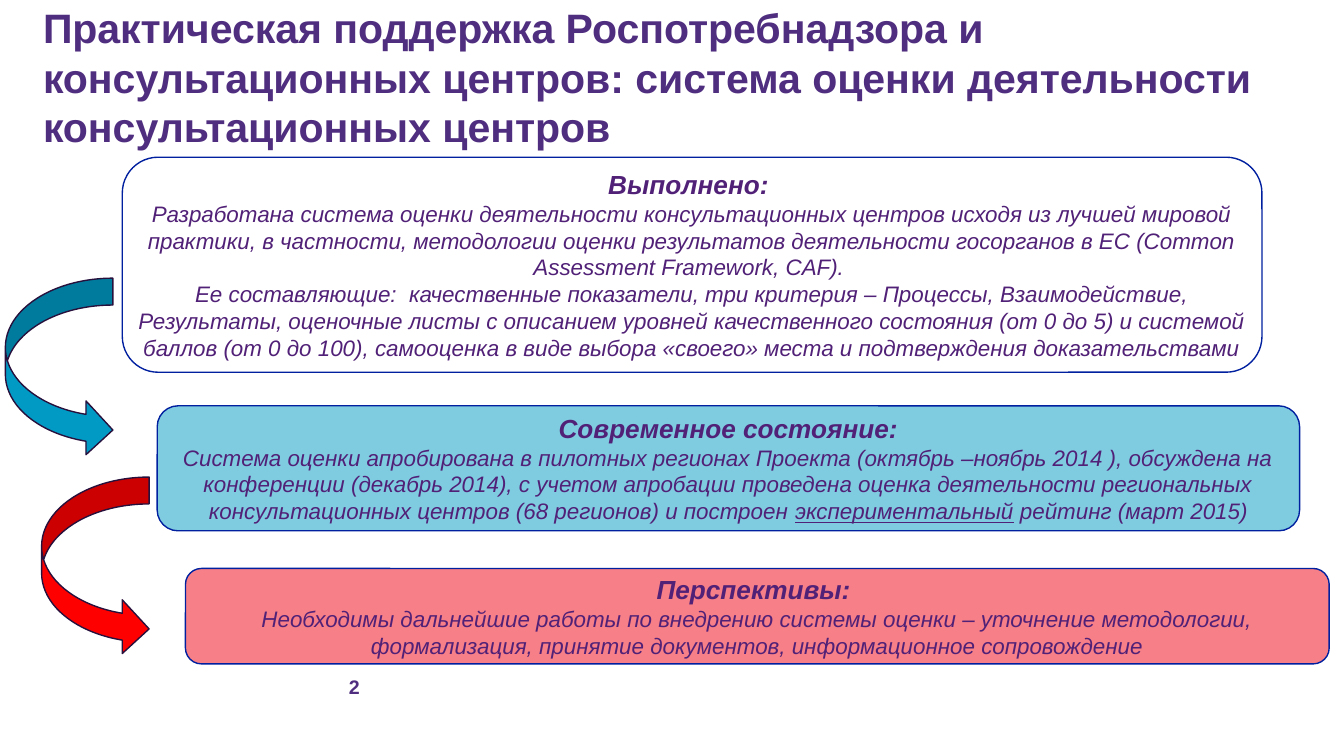
from lxml import etree
from pptx import Presentation
from pptx.dml.color import RGBColor
from pptx.enum.shapes import MSO_SHAPE
from pptx.enum.text import MSO_ANCHOR, MSO_AUTO_SIZE, PP_ALIGN
from pptx.oxml.ns import qn
from pptx.util import Inches, Pt

ROUNDED = MSO_SHAPE.ROUNDED_RECTANGLE
CURVED_ARROW = MSO_SHAPE.CURVED_RIGHT_ARROW
LEFT, CENTER = PP_ALIGN.LEFT, PP_ALIGN.CENTER
TOP, MIDDLE = MSO_ANCHOR.TOP, MSO_ANCHOR.MIDDLE

COLORS = {
    "title": "4F2D7F",
    "body": "512177",
    "box_line": "00209F",
    "arrow_line": "28103C",
    "blue": "009AC5",
    "rose": "F00010",
    "red": "FF0000",
}


def write(shape, paragraphs, color="body", align=CENTER, anchor=MIDDLE):
    """Fill a shape with paragraphs, each a list of (text, font attributes) runs."""
    frame = shape.text_frame
    frame.word_wrap = True
    frame.auto_size = MSO_AUTO_SIZE.NONE
    frame.vertical_anchor = anchor
    frame.margin_left = frame.margin_right = frame.margin_top = frame.margin_bottom = 0
    for index, runs in enumerate(paragraphs):
        paragraph = frame.paragraphs[0] if index == 0 else frame.add_paragraph()
        paragraph.alignment = align
        paragraph.line_spacing = 1.0
        paragraph.space_before = Pt(0)
        for text, attributes in runs:
            run = paragraph.add_run()
            run.text = text
            run.font.name = "Arial"
            run.font.color.rgb = RGBColor.from_string(COLORS[color])
            for name, value in attributes.items():
                setattr(run.font, name, value)


def add_outlined(kind, bounds, fill, line, opacity=100):
    """Add a preset shape with a thin line and an optional, possibly translucent fill."""
    shape = slide.shapes.add_shape(kind, *map(Inches, bounds))
    shape.shadow.inherit = False
    shape.line.color.rgb = RGBColor.from_string(COLORS[line])
    shape.line.width = Pt(0.75)
    if fill is None:
        shape.fill.background()
        return shape
    shape.fill.solid()
    shape.fill.fore_color.rgb = RGBColor.from_string(COLORS[fill])
    if opacity < 100:
        color = shape.fill._xPr.find(qn("a:solidFill"))[0]
        etree.SubElement(color, qn("a:alpha")).set("val", str(opacity * 1000))
    return shape


presentation = Presentation()
presentation.slide_width = Inches(10)
presentation.slide_height = Inches(10) * 9 // 16
slide = presentation.slides.add_slide(presentation.slide_layouts[5])

title = slide.shapes.title
title.left, title.top, title.width, title.height = map(Inches, (0.32, 0.02, 9.57, 0.84))
write(
    title,
    [[("Практическая поддержка Роспотребнадзора и консультационных центров: "
       "система оценки деятельности консультационных центров",
       {"size": Pt(22), "bold": True})]],
    color="title", align=LEFT, anchor=TOP,
)

number = slide.shapes.add_textbox(*map(Inches, (1.99, 4.97, 1.29, 0.28)))
write(number, [[("2", {"size": Pt(10.5), "bold": True})]], color="title")

heading = {"size": Pt(14), "bold": True, "italic": True}
body = {"size": Pt(12), "bold": False, "italic": True}
underlined = {**body, "underline": True}

stages = [
    ((1.17, 3.02, 8.5, 0.93), "blue", [
        [("Современное состояние:", heading)],
        [("Система оценки апробирована в пилотных регионах Проекта "
          "(октябрь –ноябрь 2014 ), обсуждена на конференции (декабрь 2014), "
          "с учетом апробации проведена оценка деятельности региональных "
          "консультационных центров (68 регионов) и построен ", body),
         ("экспериментальный", underlined),
         (" рейтинг (март 2015)", body)],
    ]),
    ((1.38, 4.23, 8.51, 0.71), "rose", [
        [("Перспективы: ", heading)],
        [("Необходимы дальнейшие работы по внедрению системы оценки – "
          "уточнение методологии, формализация, принятие документов, "
          "информационное сопровождение", body)],
    ]),
    ((0.91, 1.17, 8.48, 1.6), None, [
        [("Выполнено: ", heading)],
        [("Разработана система оценки деятельности консультационных центров "
          "исходя из лучшей мировой практики, в частности, методологии оценки "
          "результатов деятельности госорганов в ЕС "
          "(Common Assessment Framework, CAF). ", body)],
        [("Ее составляющие:  качественные показатели, три критерия – Процессы, "
          "Взаимодействие, Результаты, оценочные листы с описанием уровней "
          "качественного состояния (от 0 до 5) и системой баллов (от 0 до 100), "
          "самооценка в виде выбора «своего» места и подтверждения "
          "доказательствами", body)],
    ]),
]
for bounds, fill, paragraphs in stages:
    write(add_outlined(ROUNDED, bounds, fill, "box_line", opacity=50), paragraphs)

for left, top, fill in [(0.04, 2.07, "blue"), (0.31, 3.55, "red")]:
    add_outlined(CURVED_ARROW, (left, top, 0.8, 1.33), fill, "arrow_line")

presentation.save("out.pptx")
